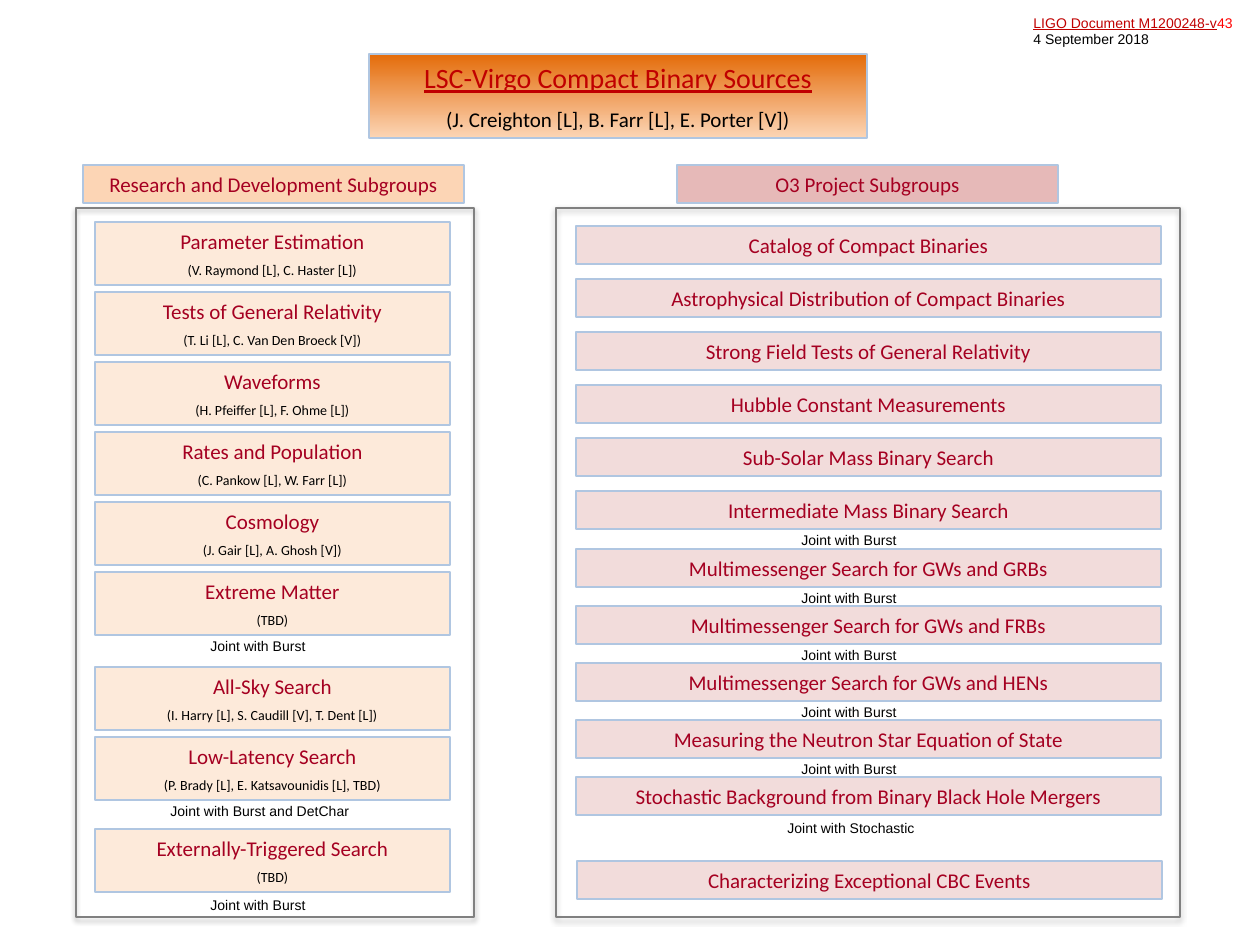
from dataclasses import dataclass

from lxml import etree
from pptx import Presentation
from pptx.dml.color import RGBColor
from pptx.enum.shapes import MSO_SHAPE
from pptx.enum.text import MSO_ANCHOR, MSO_AUTO_SIZE, PP_ALIGN
from pptx.oxml.ns import qn
from pptx.util import Emu, Pt

RECTANGLE = MSO_SHAPE.RECTANGLE
CENTER = PP_ALIGN.CENTER
MIDDLE = MSO_ANCHOR.MIDDLE
GROW = MSO_AUTO_SIZE.SHAPE_TO_FIT_TEXT

PX_PER_INCH = 126
SLIDE_W, SLIDE_H = 1260, 945


@dataclass(frozen=True)
class Theme:
    heading_font: str = "Calibri"
    note_font: str = "Arial"
    title_size: int = 16
    name_size: int = 12
    small_size: int = 8
    ink: str = "000000"
    link: str = "C00000"
    version: str = "FF0000"
    name: str = "A50021"
    outline: str = "B0C6E1"
    frame: str = "808080"
    title_top: str = "E46C0A"
    title_bottom: str = "FCD5B5"
    research_header: str = "FCD5B5"
    research_box: str = "FDEADA"
    project_header: str = "E6B9B8"
    project_box: str = "F2DCDB"


THEME = Theme()


@dataclass(frozen=True)
class Box:
    left: int
    top: int
    width: int
    height: int


@dataclass(frozen=True)
class Line:
    text: str
    size: int
    color: str
    underline: bool = False


@dataclass(frozen=True)
class Note:
    text: str
    width: int
    overlap: int = 4


@dataclass(frozen=True)
class Subgroup:
    name: str
    leads: str = ""
    note: Note | None = None


@dataclass(frozen=True)
class Run:
    """Subgroups stacked at an equal step."""
    left: int
    top: int
    step: int
    subgroups: tuple[Subgroup, ...]


@dataclass(frozen=True)
class Column:
    title: str
    header: Box
    header_fill: str
    frame: Box
    box_width: int
    box_height: int
    box_fill: str
    note_center: int
    runs: tuple[Run, ...]


BURST = Note("Joint with Burst", 126)
BURST_LAST = Note("Joint with Burst", 126, 2)
BURST_DETCHAR = Note("Joint with Burst and DetChar", 207)
STOCHASTIC = Note("Joint with Stochastic", 154, 2)

RESEARCH = Column(
    "Research and Development Subgroups", Box(83, 165, 381, 38), THEME.research_header,
    Box(76, 208, 398, 709), 355, 63, THEME.research_box, 261,
    (
        Run(95, 222, 70, (
            Subgroup("Parameter Estimation", "(V. Raymond [L], C. Haster [L])"),
            Subgroup("Tests of General Relativity", "(T. Li [L], C. Van Den Broeck [V])"),
            Subgroup("Waveforms", "(H. Pfeiffer [L], F. Ohme [L])"),
            Subgroup("Rates and Population", "(C. Pankow [L], W. Farr [L])"),
            Subgroup("Cosmology", "(J. Gair [L], A. Ghosh [V])"),
            Subgroup("Extreme Matter", "(TBD)", BURST),
        )),
        Run(95, 667, 70, (
            Subgroup("All-Sky Search", "(I. Harry [L], S. Caudill [V], T. Dent [L])"),
            Subgroup("Low-Latency Search", "(P. Brady [L], E. Katsavounidis [L], TBD)",
                     BURST_DETCHAR),
        )),
        Run(95, 829, 70, (Subgroup("Externally-Triggered Search", "(TBD)", BURST_LAST),)),
    ),
)

PROJECTS = Column(
    "O3 Project Subgroups", Box(677, 165, 381, 38), THEME.project_header,
    Box(556, 208, 624, 709), 585, 38, THEME.project_box, 852,
    (
        Run(576, 226, 53, (
            Subgroup("Catalog of Compact Binaries"),
            Subgroup("Astrophysical Distribution of Compact Binaries"),
            Subgroup("Strong Field Tests of General Relativity"),
            Subgroup("Hubble Constant Measurements"),
            Subgroup("Sub-Solar Mass Binary Search"),
            Subgroup("Intermediate Mass Binary Search", note=BURST),
        )),
        Run(576, 549, 57, (
            Subgroup("Multimessenger Search for GWs and GRBs", note=BURST),
            Subgroup("Multimessenger Search for GWs and FRBs", note=BURST),
            Subgroup("Multimessenger Search for GWs and HENs", note=BURST),
            Subgroup("Measuring the Neutron Star Equation of State", note=BURST),
            Subgroup("Stochastic Background from Binary Black Hole Mergers", note=STOCHASTIC),
        )),
        Run(577, 861, 57, (Subgroup("Characterizing Exceptional CBC Events"),)),
    ),
)


def px(length: int) -> Emu:
    return Emu(round(length * 914400 / PX_PER_INCH))


def place(box: Box) -> tuple[Emu, ...]:
    return px(box.left), px(box.top), px(box.width), px(box.height)


def rgb(color: str) -> RGBColor:
    return RGBColor.from_string(color)


def style_font(font, name: str, size: int, color: str, underline: bool = False) -> None:
    font.name, font.size = name, Pt(size)
    font.color.rgb = rgb(color)
    if underline:
        font.underline = True


def add_rectangle(slide, box: Box, outline: str):
    shape = slide.shapes.add_shape(RECTANGLE, *place(box))
    shape.shadow.inherit = False
    shape.line.color.rgb = rgb(outline)
    shape.line.width = Pt(1)
    return shape


def add_label(slide, box: Box, lines: list[Line]):
    """Outlined box with centred lines; the caller chooses the fill."""
    shape = add_rectangle(slide, box, THEME.outline)
    frame = shape.text_frame
    frame.word_wrap, frame.auto_size, frame.vertical_anchor = True, GROW, MIDDLE
    for index, line in enumerate(lines):
        paragraph = frame.add_paragraph() if index else frame.paragraphs[0]
        paragraph.text, paragraph.alignment = line.text, CENTER
        if index:
            paragraph.space_before = Pt(line.size * 0.6)
        style_font(paragraph.font, THEME.heading_font, line.size, line.color, line.underline)
    return shape


def add_solid_label(slide, box: Box, fill: str, lines: list[Line]) -> None:
    shape = add_label(slide, box, lines)
    shape.fill.solid()
    shape.fill.fore_color.rgb = rgb(fill)


def add_frame(slide, box: Box) -> None:
    """Unfilled outline with a soft shadow below it."""
    shape = add_rectangle(slide, box, THEME.frame)
    shape.fill.background()
    effects = shape._element.spPr.find(qn("a:effectLst"))
    shadow = etree.SubElement(effects, qn("a:outerShdw"), blurRad=str(Pt(3.1)),
                              dist=str(Pt(1.8)), dir="5400000", rotWithShape="0")
    color = etree.SubElement(shadow, qn("a:srgbClr"), val=THEME.ink)
    etree.SubElement(color, qn("a:alpha"), val="35000")


def add_note(slide, note: Note, center: int, top: int) -> None:
    box = Box(center - note.width // 2, top, note.width, 30)
    frame = slide.shapes.add_textbox(*place(box)).text_frame
    frame.word_wrap, frame.auto_size = False, GROW
    paragraph = frame.paragraphs[0]
    paragraph.text = note.text
    style_font(paragraph.font, THEME.note_font, THEME.small_size, THEME.ink)


def add_column(slide, column: Column) -> None:
    add_solid_label(slide, column.header, column.header_fill,
                    [Line(column.title, THEME.name_size, THEME.name)])
    add_frame(slide, column.frame)
    for run in column.runs:
        for index, subgroup in enumerate(run.subgroups):
            top = run.top + index * run.step
            lines = [Line(subgroup.name, THEME.name_size, THEME.name)]
            if subgroup.leads:
                lines.append(Line(subgroup.leads, THEME.small_size, THEME.ink))
            box = Box(run.left, top, column.box_width, column.box_height)
            add_solid_label(slide, box, column.box_fill, lines)
            if subgroup.note:
                note_top = top + column.box_height - subgroup.note.overlap
                add_note(slide, subgroup.note, column.note_center, note_top)


def add_document_reference(slide) -> None:
    frame = slide.shapes.add_textbox(*place(Box(1021, 8, 232, 47))).text_frame
    frame.word_wrap, frame.auto_size = True, GROW
    reference, date = frame.paragraphs[0], frame.add_paragraph()
    for text, color, underline in (("LIGO Document M1200248-v", THEME.link, True),
                                   ("43", THEME.version, False)):
        run = reference.add_run()
        run.text = text
        style_font(run.font, THEME.note_font, THEME.small_size, color, underline)
    date.text = "4 September 2018"
    style_font(date.font, THEME.note_font, THEME.small_size, THEME.ink)


def add_title(slide) -> None:
    title = add_label(slide, Box(369, 54, 498, 84), [
        Line("LSC-Virgo Compact Binary Sources", THEME.title_size, THEME.link, True),
        Line("(J. Creighton [L], B. Farr [L], E. Porter [V])", THEME.name_size, THEME.ink),
    ])
    title.fill.gradient()
    title.fill.gradient_angle = 270
    for stop, color in zip(title.fill.gradient_stops, (THEME.title_top, THEME.title_bottom)):
        stop.color.rgb = rgb(color)


def main() -> None:
    deck = Presentation()
    deck.slide_width, deck.slide_height = px(SLIDE_W), px(SLIDE_H)
    slide = deck.slides.add_slide(deck.slide_layouts[6])
    add_document_reference(slide)
    add_title(slide)
    for column in (RESEARCH, PROJECTS):
        add_column(slide, column)
    deck.save("out.pptx")


if __name__ == "__main__":
    main()
